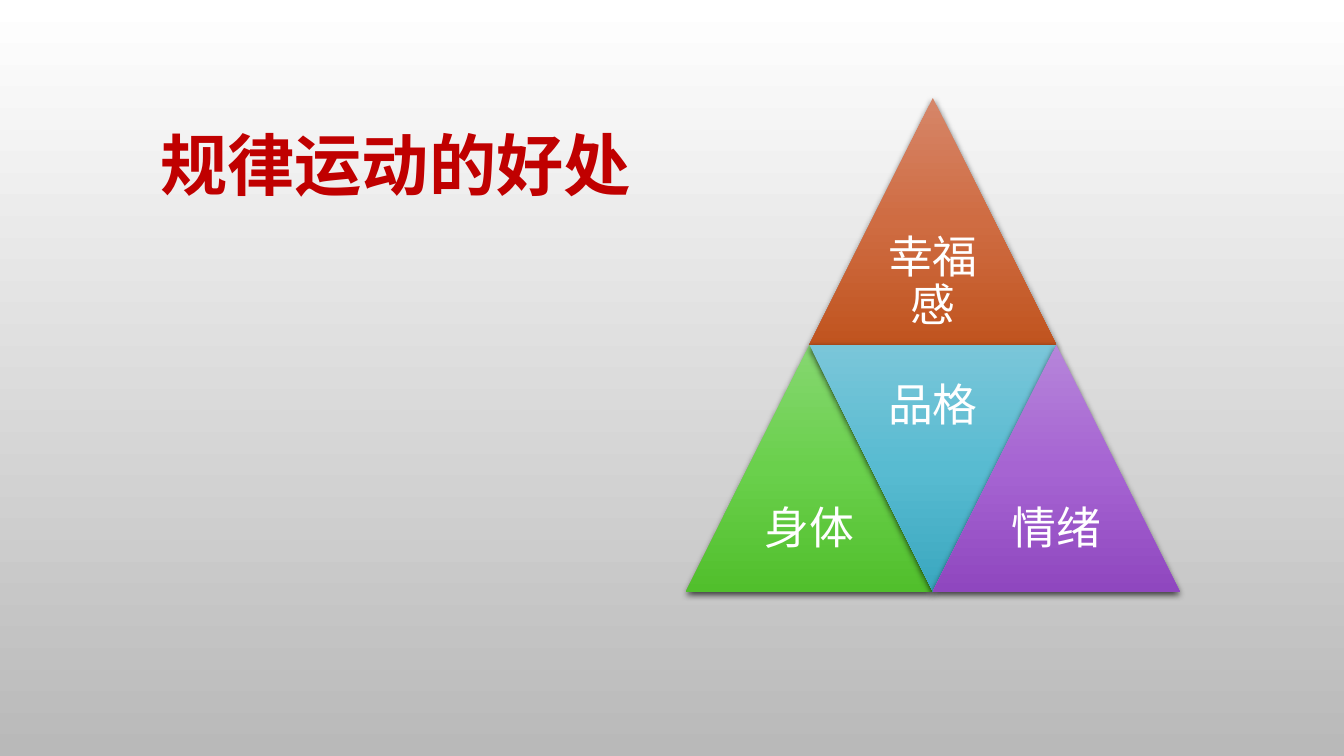
from copy import deepcopy

from lxml import etree
from pptx import Presentation
from pptx import util as u
from pptx.dml.color import RGBColor
from pptx.enum import shapes, text
from pptx.oxml import parse_xml
from pptx.oxml.ns import nsdecls, qn

WHITE = RGBColor(0xFF, 0xFF, 0xFF)
GREY = RGBColor(0xB9, 0xB9, 0xB9)
TITLE_RED = RGBColor(0xC0, 0x00, 0x00)
ORANGES = [RGBColor(0xD6, 0x86, 0x69), RGBColor(0xCF, 0x6C, 0x42), RGBColor(0xC0, 0x54, 0x1F)]
GREENS = [RGBColor(0x86, 0xD7, 0x71), RGBColor(0x6A, 0xD0, 0x4C), RGBColor(0x51, 0xBF, 0x2C)]
BLUES = [RGBColor(0x7A, 0xC6, 0xD9), RGBColor(0x58, 0xBB, 0xD1), RGBColor(0x3A, 0xA7, 0xBF)]
PURPLES = [RGBColor(0xB6, 0x85, 0xDA), RGBColor(0xA6, 0x64, 0xD2), RGBColor(0x8F, 0x47, 0xBF)]

PYRAMID_LEFT, PYRAMID_TOP, SIDE = 17.29, 2.47, 6.22
# label, colours, column in half sides, row, upside down
TRIANGLES = [
    ("幸福感", ORANGES, 1, 0, False),
    ("身体", GREENS, 0, 1, False),
    ("品格", BLUES, 1, 1, True),
    ("情绪", PURPLES, 2, 1, False),
]

SHADOW = f"""<a:outerShdw {nsdecls('a')} blurRad="63500" dist="25400" dir="5400000"
  algn="ctr" rotWithShape="0"><a:srgbClr val="000000"><a:alpha val="69000"/></a:srgbClr>
</a:outerShdw>"""


class SlideBuilder:
    font_name = "Noto Sans CJK SC"
    line_spacing = 0.9

    def __init__(self, slide):
        self.slide = slide

    def gradient(self, fill, element, colours):
        """Fill top to bottom with evenly spaced colours, whatever the rotation."""
        fill.gradient()
        fill.gradient_angle = 270
        gradient = next(element.iter(qn("a:gradFill")))
        gradient.set("rotWithShape", "0")
        stop_list = gradient.find(qn("a:gsLst"))
        while len(stop_list) < len(colours):
            stop_list.append(deepcopy(stop_list[0]))
        for index, (stop, colour) in enumerate(zip(fill.gradient_stops, colours)):
            stop.position = index / (len(colours) - 1)
            stop.color.rgb = colour

    def background(self, colours):
        self.gradient(self.slide.background.fill, self.slide.element, colours)

    def label(self, parent, words, left, top, width, height, size, colour, inset, bold=False):
        shape = parent.add_textbox(u.Cm(left), u.Cm(top), u.Cm(width), u.Cm(height))
        frame = shape.text_frame
        frame.word_wrap = True
        frame.vertical_anchor = text.MSO_ANCHOR.MIDDLE
        frame.margin_left = frame.margin_right = u.Cm(inset)
        frame.margin_top = frame.margin_bottom = u.Cm(inset)
        paragraph = frame.paragraphs[0]
        paragraph.alignment = text.PP_ALIGN.CENTER
        paragraph.line_spacing = self.line_spacing
        run = paragraph.add_run()
        run.text = words
        run.font.size = u.Pt(size)
        run.font.bold = bold
        run.font.color.rgb = colour
        run.font.name = self.font_name
        latin = run.font._element.find(qn("a:latin"))
        east_asian = etree.Element(qn("a:ea"), typeface=self.font_name)
        latin.addnext(east_asian)

    def triangle(self, parent, colours, left, top, side, upside_down):
        shape = parent.add_shape(shapes.MSO_SHAPE.ISOSCELES_TRIANGLE,
                                 u.Cm(left), u.Cm(top), u.Cm(side), u.Cm(side))
        shape.rotation = 180 if upside_down else 0
        self.gradient(shape.fill, shape.element, colours)
        shape.line.fill.background()
        shape.shadow.inherit = False
        shape.element.spPr.find(qn("a:effectLst")).append(parse_xml(SHADOW))

    def pyramid(self):
        group = self.slide.shapes.add_group_shape().shapes
        half = SIDE / 2
        for words, colours, column, row, upside_down in TRIANGLES:
            left = PYRAMID_LEFT + column * half
            top = PYRAMID_TOP + row * SIDE
            self.triangle(group, colours, left, top, SIDE, upside_down)
            label_top = top if upside_down else top + half
            self.label(group, words, left + half / 2, label_top, half, half,
                       32, WHITE, inset=0.34)


def main():
    presentation = Presentation()
    presentation.slide_width = u.Cm(33.87)
    presentation.slide_height = u.Cm(19.05)
    slide = presentation.slides.add_slide(presentation.slide_layouts[6])
    builder = SlideBuilder(slide)
    builder.background([WHITE, GREY])
    builder.label(slide.shapes, "规律运动的好处", -4.42, 2.03, 28.78, 4.45,
                  48, TITLE_RED, inset=0.25, bold=True)
    builder.pyramid()
    presentation.save("out.pptx")


if __name__ == "__main__":
    main()
